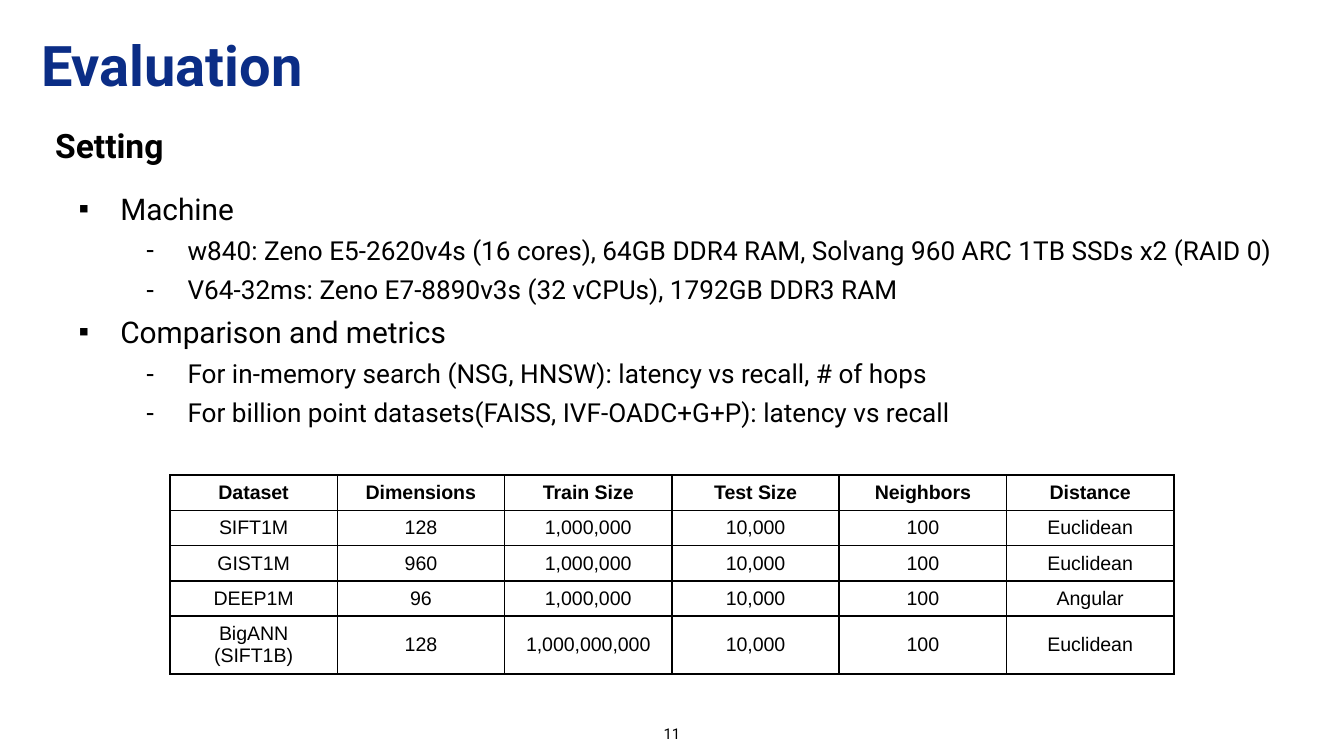
from typing import NamedTuple

from lxml.etree import SubElement
from pptx import Presentation
from pptx.dml.color import RGBColor
from pptx.enum.text import MSO_ANCHOR as Anchor, PP_ALIGN as Align
from pptx.oxml.ns import qn
from pptx.util import Inches, Pt

NAVY = RGBColor(0x0B, 0x2D, 0x86)
BLACK = RGBColor(0, 0, 0)
SLIDE_WIDTH = Inches(10)
SLIDE_HEIGHT = SLIDE_WIDTH * 9 // 16


class Area(NamedTuple):
    """A rectangle in percent of the slide's width and height."""
    left: float
    top: float
    width: float
    height: float

    def lengths(self) -> tuple[int, ...]:
        sides = (SLIDE_WIDTH, SLIDE_HEIGHT) * 2
        return tuple(round(side * share / 100) for side, share in zip(sides, self))


class Style(NamedTuple):
    size: float
    bold: bool = False
    color: RGBColor = BLACK
    name: str = "Roboto"


class Level(NamedTuple):
    bullet: str
    indent: float
    style: Style


class Item(NamedTuple):
    level: int
    text: str


class Label(NamedTuple):
    text: str
    area: Area
    style: Style
    align: Align = Align.LEFT
    line_spacing: float = 1.0


LABELS = [
    Label("Evaluation", Area(2.35, 3.02, 68.2, 12.1), Style(30, True, NAVY), line_spacing=0.9),
    Label("Setting", Area(3.4, 15.12, 93.1, 8.19), Style(18, True)),
    Label("11", Area(38.75, 94.84, 22.5, 4.27), Style(8), Align.CENTER),
]

LIST_AREA = Area(3.55, 23.31, 92.9, 70.11)
HANGING = Inches(0.31)
LEVELS = [Level("▪", 0.47, Style(16)), Level("-", 0.97, Style(14))]
ITEMS = [
    Item(0, "Machine"),
    Item(1, "w840: Zeno E5-2620v4s (16 cores), 64GB DDR4 RAM, Solvang 960 ARC 1TB SSDs x2 (RAID 0)"),
    Item(1, "V64-32ms: Zeno E7-8890v3s (32 vCPUs), 1792GB DDR3 RAM"),
    Item(0, "Comparison and metrics"),
    Item(1, "For in-memory search (NSG, HNSW): latency vs recall, # of hops"),
    Item(1, "For billion point datasets(FAISS, IVF-OADC+G+P): latency vs recall"),
]

TABLE_AREA = Area(12.65, 62.85, 74.7, 26.2)
ROW_SHARES = [0.26, 0.26, 0.26, 0.26, 0.42]
DATASETS = [
    ("Dataset", "Dimensions", "Train Size", "Test Size", "Neighbors", "Distance"),
    ("SIFT1M", "128", "1,000,000", "10,000", "100", "Euclidean"),
    ("GIST1M", "960", "1,000,000", "10,000", "100", "Euclidean"),
    ("DEEP1M", "96", "1,000,000", "10,000", "100", "Angular"),
    ("BigANN\n(SIFT1B)", "128", "1,000,000,000", "10,000", "100", "Euclidean"),
]


def set_font(para, style: Style) -> None:
    font = para.font
    font.name, font.size, font.bold = style.name, Pt(style.size), style.bold
    font.color.rgb = style.color


def add_box(page, area: Area, anchor: Anchor):
    frame = page.shapes.add_textbox(*area.lengths()).text_frame
    frame.word_wrap = True
    frame.vertical_anchor = anchor
    frame.margin_left = frame.margin_right = Inches(0.07)
    frame.margin_top = frame.margin_bottom = Inches(0.04)
    return frame


def add_label(page, label: Label) -> None:
    para = add_box(page, label.area, Anchor.MIDDLE).paragraphs[0]
    para.text = label.text
    para.alignment = label.align
    para.line_spacing = label.line_spacing
    set_font(para, label.style)


def add_list(page, area: Area, items: list[Item]) -> None:
    frame = add_box(page, area, Anchor.TOP)
    for index, item in enumerate(items):
        para = frame.add_paragraph() if index else frame.paragraphs[0]
        level = LEVELS[item.level]
        para.text, para.level, para.line_spacing = item.text, item.level, 1.25
        properties = para._p.get_or_add_pPr()
        properties.set("marL", str(Inches(level.indent)))
        properties.set("indent", str(-HANGING))
        SubElement(properties, qn("a:buFont"), typeface="Arial")
        SubElement(properties, qn("a:buChar"), char=level.bullet)
        set_font(para, level.style)


def add_borders(cell, color: RGBColor) -> None:
    properties = cell._tc.get_or_add_tcPr()
    for index, side in enumerate(("lnL", "lnR", "lnT", "lnB")):
        line = SubElement(properties, qn(f"a:{side}"), w=str(Pt(1)))
        fill = SubElement(line, qn("a:solidFill"))
        SubElement(fill, qn("a:srgbClr"), val=str(color))
        properties.remove(line)
        properties.insert(index, line)  # borders come before the fill


def add_dataset_table(page, area: Area, rows: list[tuple[str, ...]]) -> None:
    left, top, width, height = area.lengths()
    table = page.shapes.add_table(len(rows), len(rows[0]), left, top, width, height).table
    table.first_row = table.horz_banding = False
    for row, share in zip(table.rows, ROW_SHARES):
        row.height = round(height * share / sum(ROW_SHARES))
    for row_index, texts in enumerate(rows):
        style = Style(10.5, bold=row_index == 0, name="Arial")
        for column_index, text in enumerate(texts):
            cell = table.cell(row_index, column_index)
            cell.fill.background()
            cell.vertical_anchor = Anchor.MIDDLE
            cell.margin_top = cell.margin_bottom = Inches(0.04)
            add_borders(cell, BLACK)
            para = cell.text_frame.paragraphs[0]
            para.text, para.alignment = text, Align.CENTER
            set_font(para, style)


def main() -> None:
    deck = Presentation()
    deck.slide_width, deck.slide_height = SLIDE_WIDTH, SLIDE_HEIGHT
    page = deck.slides.add_slide(deck.slide_layouts[6])

    # Title, heading and page number
    for label in LABELS:
        add_label(page, label)

    # Machines and metrics, then the datasets
    add_list(page, LIST_AREA, ITEMS)
    add_dataset_table(page, TABLE_AREA, DATASETS)

    deck.save("out.pptx")


if __name__ == "__main__":
    main()
